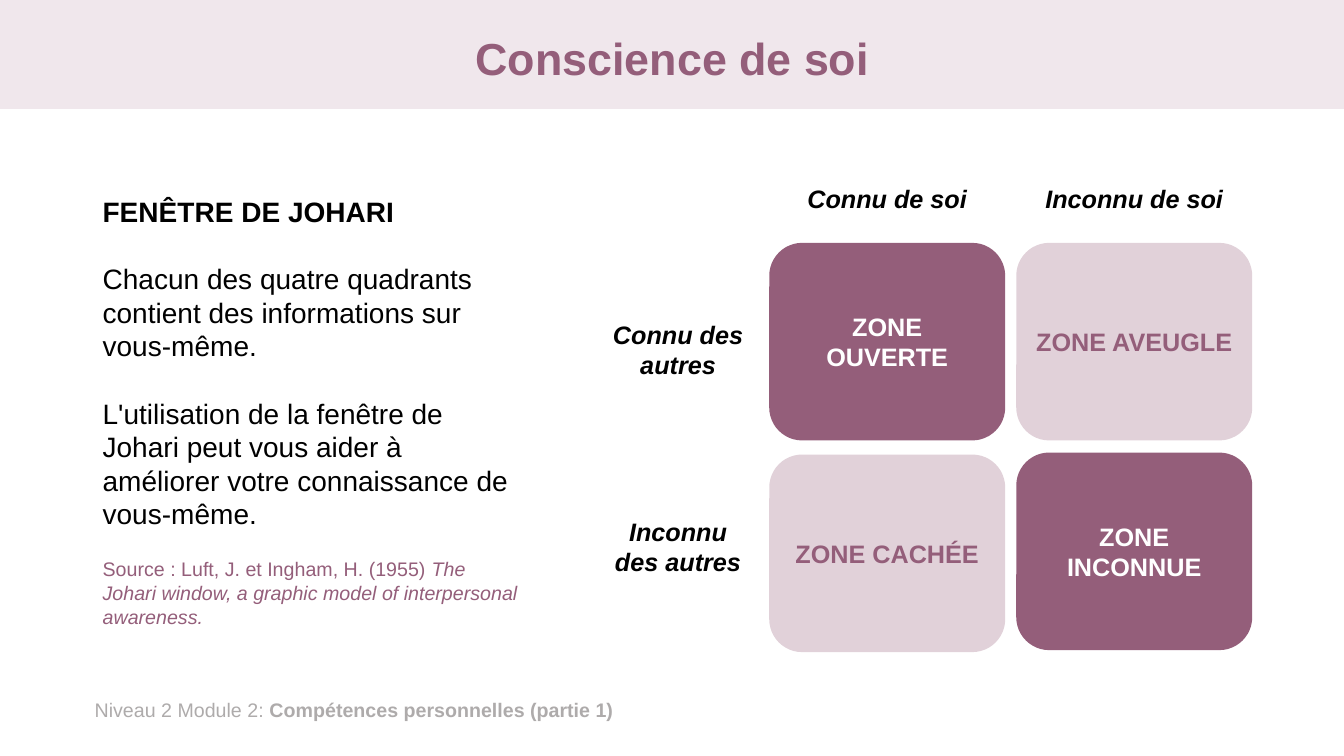
from dataclasses import dataclass

import pptx
import pptx.dml.color
import pptx.enum.shapes
import pptx.enum.text
import pptx.util

Inches = pptx.util.Inches
ALIGN = pptx.enum.text.PP_ALIGN
ANCHOR = pptx.enum.text.MSO_ANCHOR
SHAPE = pptx.enum.shapes.MSO_SHAPE


@dataclass(frozen=True)
class Theme:
    font: str = "Arial"
    plum: str = "945E7A"
    rose: str = "E1D1D9"
    band: str = "F0E7EC"
    white: str = "FFFFFF"
    black: str = "000000"
    grey: str = "AEABAB"
    title_size: int = 32
    body_size: int = 20
    label_size: int = 18
    small_size: int = 14


THEME = Theme()


def rgb(color):
    return pptx.dml.color.RGBColor.from_string(color)


def format_paragraph(paragraph, size, color, bold=False, italic=False, align=ALIGN.LEFT):
    paragraph.alignment = align
    font = paragraph.font
    font.name = THEME.font
    font.size = pptx.util.Pt(size)
    font.color.rgb = rgb(color)
    font.bold = bold
    font.italic = italic


def add_text_box(slide, left, top, width, height):
    """Add a wrapping text box and return its text frame."""
    box = slide.shapes.add_textbox(Inches(left), Inches(top), Inches(width), Inches(height))
    box.text_frame.word_wrap = True
    return box.text_frame


def add_block(slide, kind, left, top, width, height, color):
    block = slide.shapes.add_shape(
        kind, Inches(left), Inches(top), Inches(width), Inches(height))
    block.shadow.inherit = False
    block.fill.solid()
    block.fill.fore_color.rgb = rgb(color)
    block.line.fill.background()
    return block


def add_header(slide, left, top, width, height):
    title = slide.shapes.title
    band = add_block(slide, SHAPE.RECTANGLE, left, top, width, height, THEME.band)
    title.element.addprevious(band.element)

    title.left, title.top = Inches(left + 0.92), Inches(top + 0.13)
    title.width, title.height = Inches(11.5), Inches(height - 0.13)
    frame = title.text_frame
    frame.text = "Conscience de soi"
    frame.vertical_anchor = ANCHOR.MIDDLE
    paragraph = frame.paragraphs[0]
    paragraph.line_spacing = 0.9
    format_paragraph(paragraph, THEME.title_size, THEME.plum, bold=True, align=ALIGN.CENTER)


def add_explanation(slide, left, top, width):
    frame = add_text_box(slide, left, top, width, 3.47)
    frame.text = "\n".join((
        "FENÊTRE DE JOHARI",
        "Chacun des quatre quadrants contient des informations sur vous-même.",
        "L'utilisation de la fenêtre de Johari peut vous aider à "
        "améliorer votre connaissance de vous-même.",
    ))
    for index, paragraph in enumerate(frame.paragraphs):
        format_paragraph(paragraph, THEME.body_size, THEME.black, bold=index == 0)
        if index:
            paragraph.space_before = pptx.util.Pt(24)

    source = add_text_box(slide, left, top + 3.6, width, 0.81).paragraphs[0]
    format_paragraph(source, THEME.small_size, THEME.plum)
    source.add_run().text = "Source : Luft, J. et Ingham, H. (1955) "
    work = source.add_run()
    work.text = "The Johari window, a graphic model of interpersonal awareness."
    work.font.italic = True


def add_axis_label(slide, text, left, top, width, height):
    frame = add_text_box(slide, left, top, width, height)
    frame.text = text
    format_paragraph(frame.paragraphs[0], THEME.label_size, THEME.black,
                     bold=True, italic=True, align=ALIGN.CENTER)


def add_zone(slide, text, left, top, width, height, dark):
    fill, ink = (THEME.plum, THEME.white) if dark else (THEME.rose, THEME.plum)
    zone = add_block(slide, SHAPE.ROUNDED_RECTANGLE, left, top, width, height, fill)
    frame = zone.text_frame
    frame.word_wrap = True
    frame.vertical_anchor = ANCHOR.MIDDLE
    frame.text = text
    format_paragraph(frame.paragraphs[0], THEME.label_size, ink,
                     bold=True, align=ALIGN.CENTER)


def add_johari_window(slide, left, top):
    """Place axis labels and the two-by-two grid from the top left corner."""
    zone_width, zone_height = 2.34, 1.96
    columns = [left + 1.7 + 2.45 * column for column in range(2)]
    for text, column_left in zip(("Connu de soi", "Inconnu de soi"), columns):
        add_axis_label(slide, text, column_left, top, zone_width, 0.4)
    for text, offset in (("Connu des autres", 1.35), ("Inconnu des autres", 3.3)):
        add_axis_label(slide, text, left, top + offset, 1.59, 0.71)

    zones = (
        (("ZONE OUVERTE", 0.64), ("ZONE AVEUGLE", 0.64)),
        (("ZONE CACHÉE", 2.74), ("ZONE INCONNUE", 2.72)),
    )
    for row, row_zones in enumerate(zones):
        for column, (text, offset) in enumerate(row_zones):
            add_zone(slide, text, columns[column], top + offset,
                     zone_width, zone_height, dark=row == column)


def add_footer(slide, left, top, width, height):
    paragraph = add_text_box(slide, left, top, width, height).paragraphs[0]
    format_paragraph(paragraph, THEME.small_size, THEME.grey)
    paragraph.add_run().text = "Niveau 2 Module 2: "
    module = paragraph.add_run()
    module.text = "Compétences personnelles (partie 1)"
    module.font.bold = True


def main():
    presentation = pptx.Presentation()
    presentation.slide_width = Inches(13.33)
    presentation.slide_height = Inches(7.5)
    slide = presentation.slides.add_slide(presentation.slide_layouts.get_by_name("Title Only"))
    add_header(slide, 0, 0, 13.33, 1.08)
    add_footer(slide, 0.84, 6.87, 11.35, 0.34)
    add_johari_window(slide, 5.93, 1.77)
    add_explanation(slide, 0.92, 1.88, 4.36)
    presentation.save("out.pptx")


if __name__ == "__main__":
    main()
